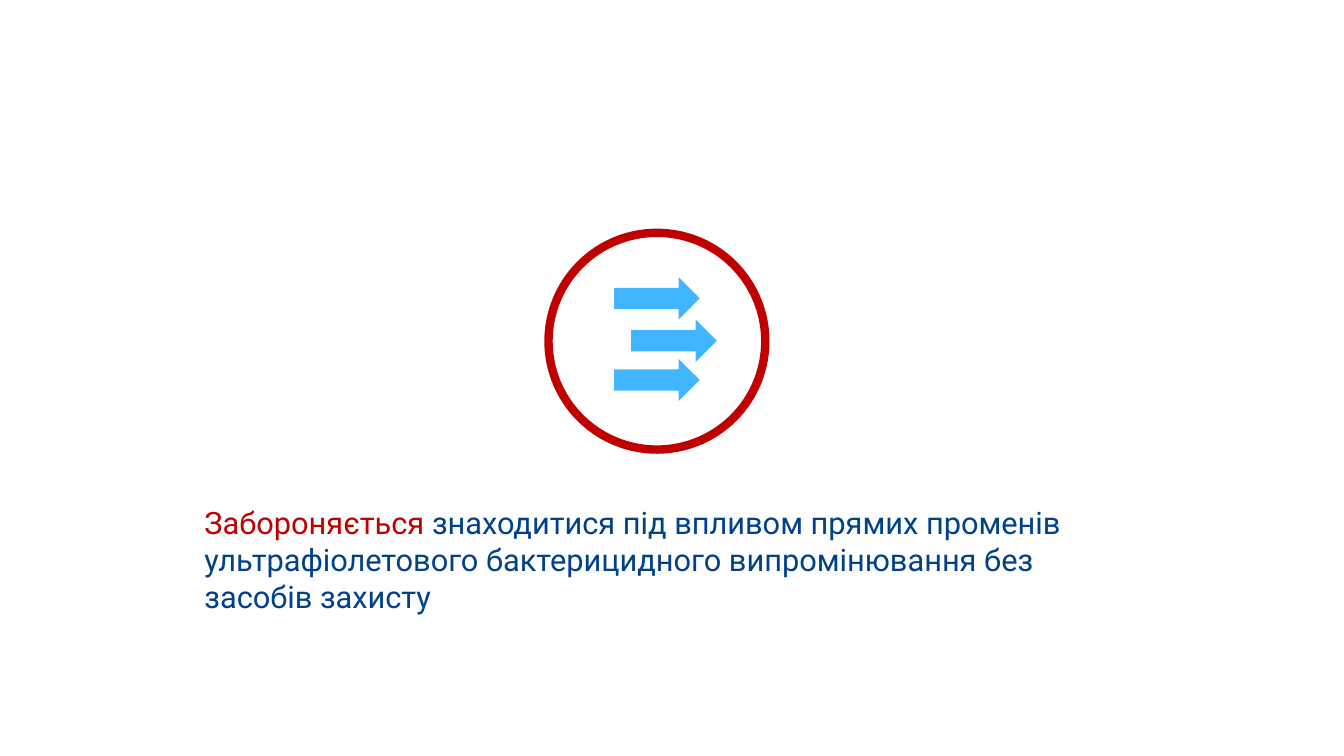
from typing import NamedTuple

from pptx import Presentation
from pptx.dml.color import RGBColor
from pptx.enum import shapes
from pptx.slide import Slide
from pptx.util import Inches, Pt

WARNING_RED = RGBColor(0xC0, 0x00, 0x00)
TEXT_BLUE = RGBColor(0x00, 0x41, 0x88)
RAY_BLUE = RGBColor(0x3F, 0xB6, 0xFF)

RAY_WIDTH, RAY_HEIGHT = 0.85, 0.42
RING_SIZE = 2.15


class Ray(NamedTuple):
    left: float
    top: float


class Phrase(NamedTuple):
    wording: str
    color: RGBColor


RAYS = [Ray(6.09, 2.75), Ray(6.26, 3.17), Ray(6.09, 3.56)]
WARNING = [
    Phrase("Забороняється ", WARNING_RED),
    Phrase(
        "знаходитися під впливом прямих променів ультрафіолетового "
        "бактерицидного випромінювання без засобів захисту",
        TEXT_BLUE,
    ),
]


def add_warning(slide: Slide, phrases: list[Phrase]) -> None:
    warning = slide.shapes.add_textbox(
        Inches(1.93), Inches(4.95), Inches(9.47), Inches(1.21)
    )
    warning.text_frame.word_wrap = True
    sentence = warning.text_frame.paragraphs[0]
    sentence.font.name = "Roboto"
    sentence.font.size = Pt(22)
    for phrase in phrases:
        run = sentence.add_run()
        run.text = phrase.wording
        run.font.color.rgb = phrase.color


def add_ray(slide: Slide, ray: Ray) -> None:
    arrow = slide.shapes.add_shape(
        shapes.MSO_SHAPE.RIGHT_ARROW,
        Inches(ray.left), Inches(ray.top), Inches(RAY_WIDTH), Inches(RAY_HEIGHT),
    )
    arrow.shadow.inherit = False
    arrow.fill.solid()
    arrow.fill.fore_color.rgb = RAY_BLUE
    arrow.line.fill.background()


def add_ring(slide: Slide) -> None:
    ring = slide.shapes.add_shape(
        shapes.MSO_SHAPE.OVAL,
        Inches(5.44), Inches(2.31), Inches(RING_SIZE), Inches(RING_SIZE),
    )
    ring.shadow.inherit = False
    ring.fill.background()
    ring.line.color.rgb = WARNING_RED
    ring.line.width = Pt(6)


def main() -> None:
    deck = Presentation()
    deck.slide_width, deck.slide_height = Inches(13.33), Inches(7.5)
    slide = deck.slides.add_slide(deck.slide_layouts[6])
    add_warning(slide, WARNING)
    for ray in RAYS:
        add_ray(slide, ray)
    add_ring(slide)
    deck.save("out.pptx")


if __name__ == "__main__":
    main()
